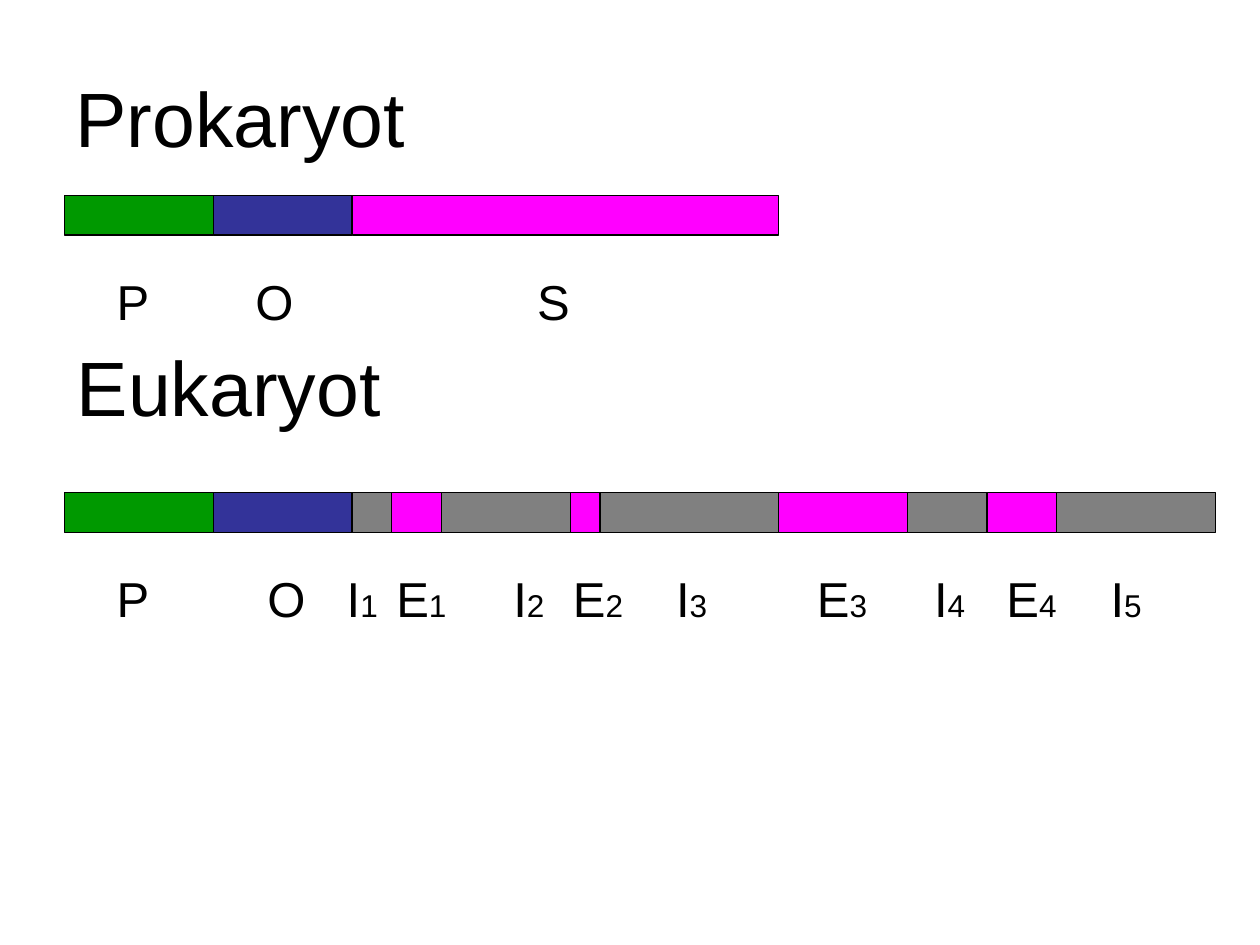
from dataclasses import dataclass
from itertools import accumulate

from pptx import Presentation
from pptx.dml.color import RGBColor
from pptx.enum.shapes import MSO_SHAPE
from pptx.enum.text import MSO_ANCHOR
from pptx.util import Inches, Pt
from lxml import etree

RECT = MSO_SHAPE.RECTANGLE
TOP, MID = MSO_ANCHOR.TOP, MSO_ANCHOR.MIDDLE
COLS = 127  # square grid cells across the slide
WIDE, HIGH = Inches(10), Inches(7.5)


@dataclass(frozen=True)
class Theme:
    font: str = "Arial"
    ink: str = "000000"
    head: int = 44
    label: int = 28
    index: int = 18
    edge: float = 0.75
    lead: int = 3


THEME = Theme()
# Fill of each kind of gene part
FILLS = {"P": "009900", "O": "333399", "S": "FF00FF", "E": "FF00FF", "I": "808080"}


def cell(n):
    return round(n * WIDE / COLS)


def color(code):
    return RGBColor.from_string(code)


def add_run(para, text, size):
    run = para.add_run()
    run.text = text
    run.font.name = THEME.font
    run.font.size = Pt(size)
    run.font.color.rgb = color(THEME.ink)


def add_box(slide, box, anchor=TOP):
    frame = slide.shapes.add_textbox(*map(cell, box)).text_frame
    frame.word_wrap = True
    frame.vertical_anchor = anchor
    para = frame.paragraphs[0]
    if anchor == TOP:
        para.space_before = Pt(THEME.lead)
    return para


def add_tabs(para, stops):
    props = para._p.get_or_add_pPr()
    space = props.nsmap["a"]
    tabs = etree.SubElement(props, f"{{{space}}}tabLst")
    for stop in stops:
        etree.SubElement(tabs, f"{{{space}}}tab", pos=str(cell(stop)), algn="l")


def add_bar(slide, left, top, high, parts):
    """Lay the gene parts end to end."""
    starts = accumulate((wide for _, wide, _ in parts), initial=left)
    for (name, wide, _), x in zip(parts, starts):
        part = slide.shapes.add_shape(RECT, *map(cell, (x, top, wide, high)))
        part.shadow.inherit = False
        part.fill.solid()
        part.fill.fore_color.rgb = color(FILLS[name[0]])
        part.line.color.rgb = color(THEME.ink)
        part.line.width = Pt(THEME.edge)


def add_names(slide, box, parts):
    """Write all part names on one line, each at its own tab stop."""
    para = add_box(slide, box)
    add_tabs(para, [stop for _, _, stop in parts[1:]])
    for i, (name, _, _) in enumerate(parts):
        add_run(para, ("\t" if i else "") + name[0], THEME.label)
        if name[1:]:
            add_run(para, name[1:], THEME.index)


def add_gene(slide, box, title, head, anchor, parts):
    """Heading, bar and names; box holds the bar, head the heading."""
    left, top, wide, high = box
    dx, dy, span, tall = head
    para = add_box(slide, (left + dx, top + dy, span, tall), anchor)
    add_run(para, title, THEME.head)
    add_bar(slide, left, top, high, parts)
    add_names(slide, (left + 4, top + 7, wide, 7.2), parts)


# Name, width and tab stop of each part, in grid cells
START = [("P", 15, 0)]
PRO = START + [("O", 14, 14), ("S", 43, 42.4)]
EU = START + [
    ("O", 14, 15.2), ("I1", 4, 23.2), ("E1", 5, 28.2), ("I2", 13, 40),
    ("E2", 3, 46), ("I3", 18, 56.4), ("E3", 13, 70.6), ("I4", 8, 82.4),
    ("E4", 7, 89.7), ("I5", 16, 100.2),
]


def main():
    deck = Presentation()
    deck.slide_width, deck.slide_height = WIDE, HIGH
    slide = deck.slides.add_slide(deck.slide_layouts[6])
    add_gene(slide, (6.5, 19.7, 55, 4), "Prokaryot",
             (-0.15, -15.9, 114.3, 15.9), MID, PRO)
    add_gene(slide, (6.5, 49.65, 112, 4), "Eukaryot",
             (0, -16, 63, 10.5), TOP, EU)
    deck.save("out.pptx")


if __name__ == "__main__":
    main()
